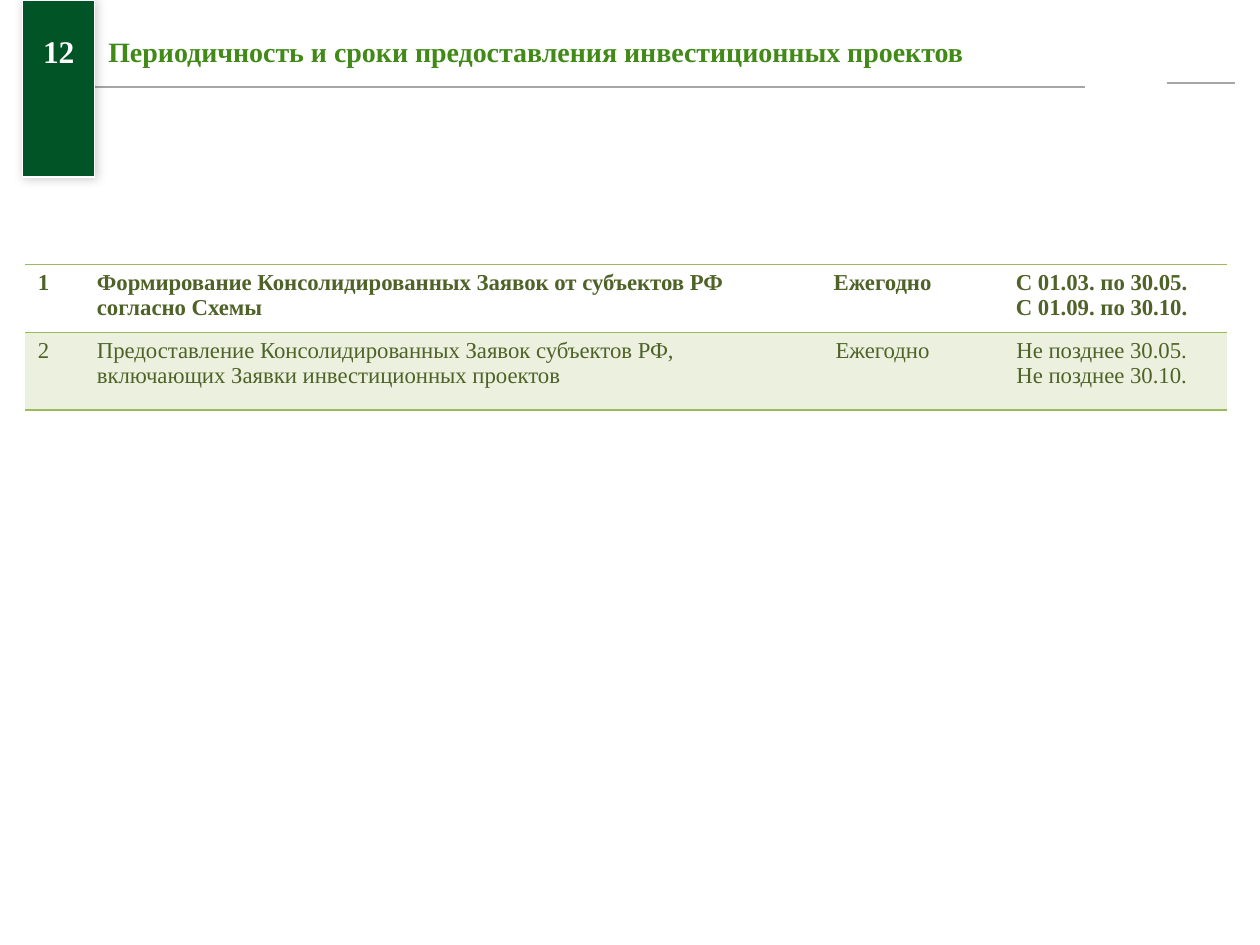
from lxml.etree import SubElement
from pptx import Presentation
from pptx.dml.color import RGBColor
from pptx.enum.shapes import MSO_CONNECTOR, MSO_SHAPE
from pptx.enum.text import MSO_ANCHOR, PP_ALIGN
from pptx.oxml import parse_xml
from pptx.oxml.ns import nsdecls, qn
from pptx.util import Cm, Pt

COLORS = {
    "tab": "005426",
    "white": "FFFFFF",
    "heading": "418A18",
    "rule": "A6A6A6",
    "border": "9BBB59",
    "band": "EBF1DE",
    "text": "4F6228",
}
FONT = "Times New Roman"
NO_STYLE = "{2D5ABB26-0587-4C30-8999-92F81FD0307C}"
COLUMN_WIDTHS = (1.19, 14.2, 3.78, 5.05)
ROW_HEIGHTS = (1.37, 1.57)
SCHEDULE = (
    (
        ("1",),
        ("Формирование Консолидированных Заявок от субъектов РФ согласно Схемы",),
        ("Ежегодно",),
        ("С 01.03. по 30.05.", "С 01.09. по 30.10."),
    ),
    (
        ("2",),
        ("Предоставление Консолидированных Заявок субъектов РФ, "
         "включающих Заявки инвестиционных проектов",),
        ("Ежегодно",),
        ("Не позднее 30.05.", "Не позднее 30.10."),
    ),
)


def color(name):
    """Return the palette colour with the given name."""
    return RGBColor.from_string(COLORS[name])


def write_lines(text_frame, lines, size, color_name, bold=True, align=PP_ALIGN.LEFT):
    """Write each line as a paragraph with one formatted run."""
    text_frame.word_wrap = True
    for index, line in enumerate(lines):
        paragraph = text_frame.paragraphs[0] if index == 0 else text_frame.add_paragraph()
        paragraph.alignment = align
        run = paragraph.add_run()
        run.text = line
        run.font.name = FONT
        run.font.size = Pt(size)
        run.font.bold = bold
        run.font.color.rgb = color(color_name)


def add_rule(slide, left, top, width):
    """Add a thin horizontal grey rule."""
    rule = slide.shapes.add_connector(
        MSO_CONNECTOR.STRAIGHT, Cm(left), Cm(top), Cm(left + width), Cm(top))
    rule.line.color.rgb = color("rule")
    rule.line.width = Pt(1)
    SubElement(rule.element.spPr, qn("a:effectLst"))


def add_number_tab(slide, left, top, width, height):
    """Add the green tab with the slide number and a soft shadow."""
    tab = slide.shapes.add_shape(
        MSO_SHAPE.RECTANGLE, Cm(left), Cm(top), Cm(width), Cm(height))
    tab.fill.solid()
    tab.fill.fore_color.rgb = color("tab")
    tab.line.color.rgb = color("white")
    tab.line.width = Pt(0.75)
    tab.element.spPr.append(parse_xml(
        f'<a:effectLst {nsdecls("a")}>'
        f'<a:outerShdw blurRad="{Pt(6)}" dist="{Pt(1)}" dir="2700000">'
        '<a:srgbClr val="000000"><a:alpha val="20000"/></a:srgbClr>'
        '</a:outerShdw></a:effectLst>'))
    text_frame = tab.text_frame
    text_frame.margin_left = text_frame.margin_right = text_frame.margin_bottom = 0
    text_frame.margin_top = Cm(0.65)
    text_frame.vertical_anchor = MSO_ANCHOR.TOP
    write_lines(text_frame, ["12"], 18, "white", align=PP_ALIGN.CENTER)


def add_header(slide, left, top, width):
    """Place the rules, the number tab and the heading across the top."""
    tab_width = 1.45
    add_rule(slide, left + 0.05, top + 1.75, 21.36)
    add_rule(slide, left + width - 1.37, top + 1.68, 1.37)
    add_number_tab(slide, left, top, tab_width, 3.57)
    title = slide.shapes.title
    title.left, title.top = Cm(left + tab_width + 0.02), Cm(top + 0.56)
    title.width, title.height = Cm(19.63), Cm(0.94)
    title.text_frame.vertical_anchor = MSO_ANCHOR.MIDDLE
    write_lines(
        title.text_frame,
        ["Периодичность и сроки предоставления инвестиционных проектов"],
        16, "heading")


def add_borders(cell, sides):
    """Draw green borders on the given sides of a cell."""
    properties = cell._tc.get_or_add_tcPr()
    for index, side in enumerate(sides):
        properties.insert(index, parse_xml(
            f'<a:{side} {nsdecls("a")} w="{Pt(1)}"><a:solidFill>'
            f'<a:srgbClr val="{COLORS["border"]}"/></a:solidFill></a:{side}>'))


def add_schedule(slide, left, top):
    """Add the schedule table with a bold first row and a tinted second row."""
    frame = slide.shapes.add_table(
        len(ROW_HEIGHTS), len(COLUMN_WIDTHS), Cm(left), Cm(top),
        Cm(sum(COLUMN_WIDTHS)), Cm(sum(ROW_HEIGHTS)))
    table = frame.table
    table.first_row = table.horz_banding = False
    table._tbl.tblPr.find(qn("a:tableStyleId")).text = NO_STYLE
    for column, width in zip(table.columns, COLUMN_WIDTHS):
        column.width = Cm(width)
    for row_index, (row, height) in enumerate(zip(table.rows, ROW_HEIGHTS)):
        row.height = Cm(height)
        is_first = row_index == 0
        for column_index, cell in enumerate(row.cells):
            align = PP_ALIGN.LEFT if column_index < 2 else PP_ALIGN.CENTER
            write_lines(cell.text_frame, SCHEDULE[row_index][column_index],
                        13, "text", is_first, align)
            if is_first:
                cell.fill.background()
            else:
                cell.fill.solid()
                cell.fill.fore_color.rgb = color("band")
            add_borders(cell, ("lnT", "lnB"))


def main():
    """Build and save the slide."""
    presentation = Presentation()
    presentation.slide_width, presentation.slide_height = Cm(25.4), Cm(19.05)
    slide = presentation.slides.add_slide(presentation.slide_layouts[5])
    add_header(slide, 0.46, 0, 24.43)
    add_schedule(slide, 0.51, 5.33)
    presentation.save("out.pptx")


if __name__ == "__main__":
    main()
